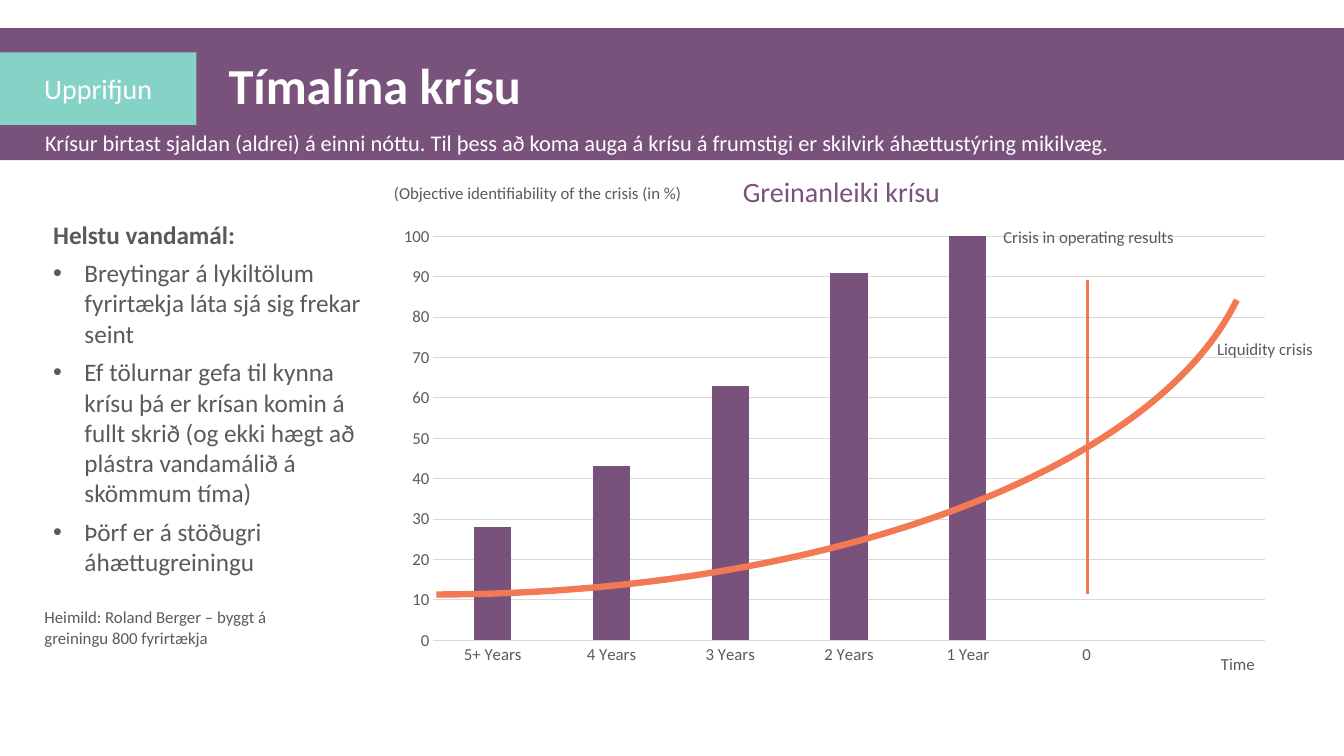
import math

from lxml import etree
from pptx import Presentation
from pptx.chart.data import CategoryChartData
from pptx.dml.color import RGBColor
from pptx.enum.chart import XL_CHART_TYPE, XL_TICK_MARK
from pptx.enum.shapes import MSO_CONNECTOR, MSO_SHAPE
from pptx.enum.text import MSO_ANCHOR, PP_ALIGN
from pptx.oxml import parse_xml
from pptx.oxml.ns import nsdecls, qn
from pptx.util import Cm, Pt

COLUMNS = XL_CHART_TYPE.COLUMN_CLUSTERED
NO_TICK = XL_TICK_MARK.NONE
STRAIGHT = MSO_CONNECTOR.STRAIGHT
RECTANGLE = MSO_SHAPE.RECTANGLE
TOP, MIDDLE = MSO_ANCHOR.TOP, MSO_ANCHOR.MIDDLE
LEFT, CENTER, RIGHT = PP_ALIGN.LEFT, PP_ALIGN.CENTER, PP_ALIGN.RIGHT

PURPLE = RGBColor(0x79, 0x52, 0x7B)
MINT = RGBColor(0x85, 0xD2, 0xC7)
ORANGE = RGBColor(0xF2, 0x79, 0x54)
GREY = RGBColor(0x59, 0x5A, 0x59)
PALE = RGBColor(0xD9, 0xD9, 0xD9)
WHITE = RGBColor(0xFF, 0xFF, 0xFF)
FONT = "Calibri"


def style_font(font, size, color, bold=False):
    font.name = FONT
    font.size = Pt(size)
    font.bold = bold
    font.color.rgb = color


def add_span(para, text, size, color, bold=False):
    span = para.add_run()
    span.text = text
    style_font(span.font, size, color, bold)


def add_text(page, box, text, size, color, bold=False, align=LEFT, spacing=None):
    frame = page.shapes.add_textbox(*map(Cm, box)).text_frame
    frame.word_wrap = True
    frame.vertical_anchor = TOP
    para = frame.paragraphs[0]
    para.alignment = align
    para.line_spacing = spacing
    add_span(para, text, size, color, bold)
    return frame


def add_label(page, box, text, align=LEFT, spacing=Pt(15)):
    frame = add_text(page, box, text, 12, GREY, align=align, spacing=spacing)
    frame.margin_top = frame.margin_bottom = Cm(0.1)
    frame.margin_left = frame.margin_right = Cm(0.23)


def add_block(page, box, color):
    block = page.shapes.add_shape(RECTANGLE, *map(Cm, box))
    block.shadow.inherit = False
    block.fill.solid()
    block.fill.fore_color.rgb = color
    block.line.fill.background()
    return block


def add_header(page, box):
    left, top, width, height = box
    add_block(page, box, PURPLE)
    tag = add_block(page, (left, top + 0.61, 4.95, 1.83), MINT)
    tag.text_frame.vertical_anchor = MIDDLE
    para = tag.text_frame.paragraphs[0]
    para.alignment = CENTER
    add_span(para, "Upprifjun", 20, WHITE)
    add_text(page, (left + 0.89, top + 2.49, width - 2, 1.2),
             "Krísur birtast sjaldan (aldrei) á einni nóttu. Til þess að koma auga á "
             "krísu á frumstigi er skilvirk áhættustýring mikilvæg.",
             16, WHITE, spacing=0.9)
    add_text(page, (left + 5.51, top + 0.69, width - 6, 1.6),
             "Tímalína krísu", 36, WHITE, bold=True, spacing=0.9)


def add_bullet(para):
    properties = para._p.get_or_add_pPr()
    properties.set("marL", str(Cm(0.79)))
    properties.set("indent", str(-Cm(0.79)))
    color = etree.SubElement(properties, qn("a:buClr"))
    etree.SubElement(color, qn("a:srgbClr")).set("val", str(GREY))
    etree.SubElement(properties, qn("a:buFont")).set("typeface", "Arial")
    etree.SubElement(properties, qn("a:buChar")).set("char", "•")


def add_problems(page, box):
    left, top, width, height = box
    frame = add_text(page, (left + 0.2, top, width - 0.2, height - 1.8),
                     "Helstu vandamál:", 18, GREY, bold=True)
    problems = [
        "Breytingar á lykiltölum fyrirtækja láta sjá sig frekar seint",
        "Ef tölurnar gefa til kynna krísu þá er krísan komin á fullt skrið "
        "(og ekki hægt að plástra vandamálið á skömmum tíma)",
        "Þörf er á stöðugri áhættugreiningu",
    ]
    for problem in problems:
        para = frame.add_paragraph()
        para.space_before = Pt(6)
        add_bullet(para)
        add_span(para, problem, 18, GREY)
    add_label(page, (left, top + height - 1.27, 7.34, 1.27),
              "Heimild: Roland Berger – byggt á greiningu 800 fyrirtækja")


def fix_plot_area(chart, x, y, width, height):
    area = chart._chartSpace.chart.plotArea
    for layout in area.findall(qn("c:layout")):
        area.remove(layout)
    area.insert(0, parse_xml(
        f'<c:layout {nsdecls("c")}><c:manualLayout><c:layoutTarget val="inner"/>'
        f'<c:xMode val="edge"/><c:yMode val="edge"/><c:x val="{x}"/><c:y val="{y}"/>'
        f'<c:w val="{width}"/><c:h val="{height}"/></c:manualLayout></c:layout>'))


def add_columns(page, box):
    data = CategoryChartData()
    data.categories = ["5+ Years", "4 Years", "3 Years", "2 Years", "1 Year", "0", ""]
    data.add_series("Series 1", (28, 43, 63, 91, 100, None, None))
    chart = page.shapes.add_chart(COLUMNS, *map(Cm, box), data).chart
    chart.has_legend = False
    chart.has_title = False
    style_font(chart.font, 12, GREY)
    fix_plot_area(chart, 0.054, 0.043, 0.926, 0.887)

    plot = chart.plots[0]
    plot.vary_by_categories = False
    plot.gap_width = 219
    plot.overlap = -27
    fill = plot.series[0].format.fill
    fill.solid()
    fill.fore_color.rgb = PURPLE

    values, years = chart.value_axis, chart.category_axis
    for axis in (values, years):
        axis.major_tick_mark = axis.minor_tick_mark = NO_TICK
        style_font(axis.tick_labels.font, 12, GREY)
    values.minimum_scale = 0
    values.maximum_scale = 100
    values.major_unit = 10
    values.format.line.fill.background()
    for line in (values.major_gridlines.format.line, years.format.line):
        line.color.rgb = PALE
        line.width = Pt(0.75)


def add_liquidity_curve(page, left, bottom):
    radius_x, radius_y, sweep, steps = 20.65, 9.45, 77.6, 80
    angles = [math.radians(sweep * step / steps) for step in range(1, steps + 1)]
    points = [(Cm(left + radius_x * math.sin(angle)),
               Cm(bottom - radius_y * (1 - math.cos(angle)))) for angle in angles]
    builder = page.shapes.build_freeform(Cm(left), Cm(bottom))
    builder.add_line_segments(points, close=False)
    curve = builder.convert_to_shape()
    curve.shadow.inherit = False
    curve.fill.background()
    curve.line.color.rgb = ORANGE
    curve.line.width = Pt(4.56)


def add_crisis_chart(page, box):
    left, top, width, height = box
    add_columns(page, (left, top + 1.19, 22.63, 11.48))
    add_liquidity_curve(page, left + 1.3, top + 10.71)
    marker_x = Cm(left + 17.71)
    marker = page.shapes.add_connector(
        STRAIGHT, marker_x, Cm(top + 10.71), marker_x, Cm(top + 2.79))
    marker.line.color.rgb = ORANGE
    marker.line.width = Pt(2)
    etree.SubElement(marker._element.spPr, qn("a:effectLst"))

    add_label(page, (left + 14.23, top + 1.32, 7.01, 0.74),
              "Crisis in operating results", CENTER)
    add_label(page, (left + width - 7.01, top + 4.14, 7.01, 0.74),
              "Liquidity crisis", RIGHT)
    add_label(page, (left + 20.75, top + 12.09, 1.4, 0.74), "Time", RIGHT)
    add_label(page, (left, top + 0.12, 8.15, 1),
              "(Objective identifiability of the crisis (in %)", spacing=1.25)
    add_text(page, (left + 8.77, top, 6, 1.12), "Greinanleiki krísu", 20, PURPLE)


def main():
    deck = Presentation()
    deck.slide_width, deck.slide_height = Cm(33.87), Cm(19.05)
    page = deck.slides.add_slide(deck.slide_layouts[6])
    add_header(page, (0, 0.71, 33.87, 3.33))
    add_problems(page, (0.89, 5.39, 9.06, 11.04))
    add_crisis_chart(page, (9.7, 4.27, 23.62, 12.83))
    deck.save("out.pptx")


if __name__ == "__main__":
    main()
